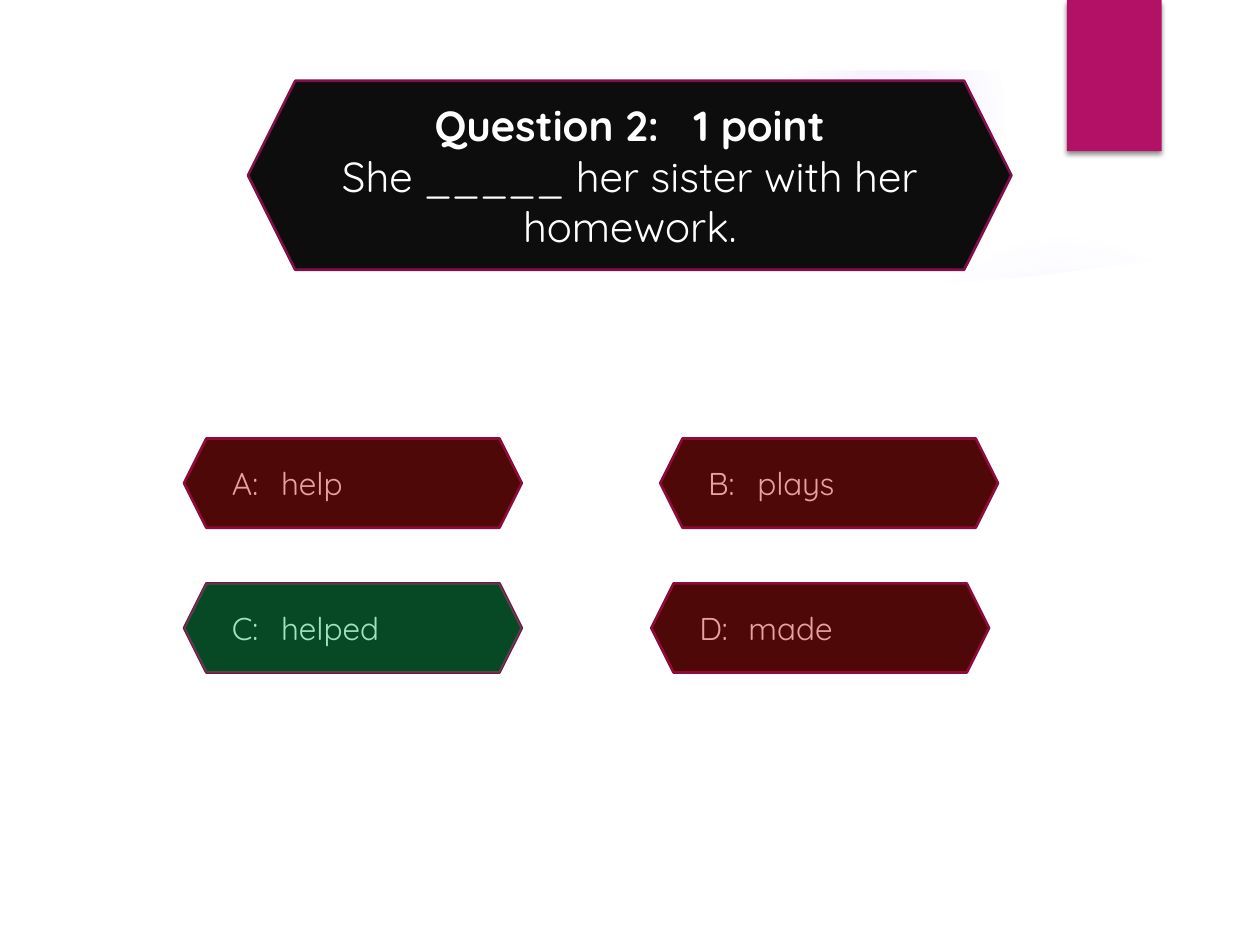
"""Build a quiz slide with one question and four marked answers."""
from lxml import etree
from pptx import Presentation
from pptx import util as u
from pptx.dml.color import RGBColor
from pptx.enum import shapes, text
from pptx.oxml import ns

WHITE = RGBColor(0xFF, 0xFF, 0xFF)
BLACK = RGBColor(0x0D, 0x0D, 0x0D)
PLUM = RGBColor(0x84, 0x0D, 0x4B)
MAGENTA = RGBColor(0xB3, 0x11, 0x66)
VIOLET = RGBColor(0x9B, 0x6B, 0xF2)
GREEN = RGBColor(0x00, 0xB0, 0x50)
RED = RGBColor(0xC0, 0x00, 0x00)


def add_tag(parent, tag, **values):
    child = etree.SubElement(parent, ns.qn(tag))
    for key, value in values.items():
        child.set(key, str(value))
    return child


def paint(shape, color, alpha=100, outline=None):
    shape.shadow.inherit = False
    shape.fill.solid()
    shape.fill.fore_color.rgb = color
    if alpha < 100:
        solid = shape.element.spPr.find(ns.qn("a:solidFill"))
        add_tag(solid[0], "a:alpha", val=alpha * 1000)
    if outline is None:
        shape.line.fill.background()
    else:
        shape.line.color.rgb = outline
        shape.line.width = u.Pt(1.5)
    return shape


deck = Presentation()
deck.slide_width, deck.slide_height = u.Cm(25.4), u.Cm(19.05)
page = deck.slides.add_slide(deck.slide_layouts[6])

glows = [
    (0, 8.05, 6.55, [(0, 8), (36, 8), (72, 0)]),
    (17.5, 4.65, 7.82, [(0, 7), (36, 6), (69, 0)]),
    (15.8, 0, 4.45, [(0, 14), (36, 7), (73, 0)]),
    (17.5, 16.31, 2.74, [(0, 14), (36, 7), (66, 0)]),
    (0, 7.42, 11.63, [(0, 11), (36, 10), (75, 0)]),
]
for left, top, size, stops in glows:
    glow = paint(page.shapes.add_shape(
        shapes.MSO_SHAPE.OVAL, u.Cm(left), u.Cm(top), u.Cm(size), u.Cm(size)), VIOLET)
    properties = glow.element.spPr
    gradient = etree.Element(ns.qn("a:gradFill"))
    stop_list = add_tag(gradient, "a:gsLst")
    for position, alpha in stops:
        stop = add_tag(stop_list, "a:gs", pos=position * 1000)
        color = add_tag(stop, "a:srgbClr", val=VIOLET)
        add_tag(color, "a:alpha", val=alpha * 1000)
    radial = add_tag(gradient, "a:path")
    radial.set("path", "circle")
    add_tag(radial, "a:fillToRect", l=50000, t=50000, r=50000, b=50000)
    properties.replace(properties.find(ns.qn("a:solidFill")), gradient)

swoosh = [(17.75, 5.94), (20.5, 5.8), (24.28, 5.28), (24.15, 4.42),
          (21.6, 5.16), (19.55, 5.56), (17.68, 5.82)]
paper = [(1.35, 5.16), (4.39, 5.51), (7.8, 5.79), (11.15, 5.94), (14.91, 5.94),
         (17.88, 5.82), (20.96, 5.56), (24.05, 5.16), (24.05, 17.75), (1.35, 17.75)]
frame_outside = [(0, 0), (0, 19.05), (25.4, 19.05), (25.4, 0)]
frame_inside = [(24, 17.65), (1.42, 17.65), (1.42, 1.42), (24, 1.42)]
for contours, alpha in [([swoosh], 20), ([paper], 100), ([frame_outside, frame_inside], 100)]:
    outlines = [[(u.Cm(x), u.Cm(y)) for x, y in contour] for contour in contours]
    builder = page.shapes.build_freeform(*outlines[0][0])
    builder.add_line_segments(outlines[0][1:], close=True)
    for outline in outlines[1:]:
        builder.move_to(*outline[0])
        builder.add_line_segments(outline[1:], close=True)
    paint(builder.convert_to_shape(), WHITE, alpha)

ribbon = paint(page.shapes.add_shape(
    shapes.MSO_SHAPE.RECTANGLE, u.Cm(21.51), 0, u.Cm(1.91), u.Cm(3.05)), MAGENTA)
effects = ribbon.element.spPr.find(ns.qn("a:effectLst"))
shadow = add_tag(effects, "a:outerShdw", blurRad=u.Pt(3), dist=u.Pt(2), dir=5400000, rotWithShape=0)
add_tag(add_tag(shadow, "a:srgbClr", val="000000"), "a:alpha", val=45000)

answers = [
    ("D:\tmade", 13.13, 11.76, RED),
    ("C:\thelped", 3.71, 11.76, GREEN),
    ("B:\tplays", 13.31, 8.84, RED),
    ("A:\thelp", 3.71, 8.84, RED),
]
answer_size = u.Cm(6.81), u.Cm(1.8)
answer_format = {"name": "Quicksand", "size": u.Pt(18)}
for wording, left, top, tint in answers:
    box = paint(page.shapes.add_shape(
        shapes.MSO_SHAPE.HEXAGON, u.Cm(left), u.Cm(top), *answer_size), BLACK, outline=PLUM)
    box.text_frame.vertical_anchor = text.MSO_ANCHOR.MIDDLE
    para = box.text_frame.paragraphs[0]
    para.alignment = text.PP_ALIGN.LEFT
    tabs = add_tag(para._p.get_or_add_pPr(), "a:tabLst")
    add_tag(tabs, "a:tab", pos=u.Cm(0.99), algn="l")
    span = para.add_run()
    span.text = wording
    for key, value in answer_format.items():
        setattr(span.font, key, value)
    span.font.color.rgb = WHITE

question = paint(page.shapes.add_shape(
    shapes.MSO_SHAPE.HEXAGON, u.Cm(5), u.Cm(1.63), u.Cm(15.39), u.Cm(3.81)), BLACK, outline=PLUM)
frame = question.text_frame
frame.word_wrap = True
frame.vertical_anchor = text.MSO_ANCHOR.MIDDLE
question_lines = [
    (["Question 2:", " ", "1 point"], True),
    (["She _____ her sister with her homework."], False),
]
for index, (pieces, bold) in enumerate(question_lines):
    para = frame.add_paragraph() if index else frame.paragraphs[0]
    para.alignment = text.PP_ALIGN.CENTER
    for piece in pieces:
        span = para.add_run()
        span.text = piece
        for key, value in {"name": "Quicksand", "size": u.Pt(24), "bold": bold}.items():
            setattr(span.font, key, value)
        span.font.color.rgb = WHITE
        if piece == " ":
            span._r.get_or_add_rPr().set("spc", "1300")

for wording, left, top, tint in reversed(answers):
    paint(page.shapes.add_shape(
        shapes.MSO_SHAPE.HEXAGON, u.Cm(left), u.Cm(top), *answer_size), tint, 37)

deck.save("out.pptx")
